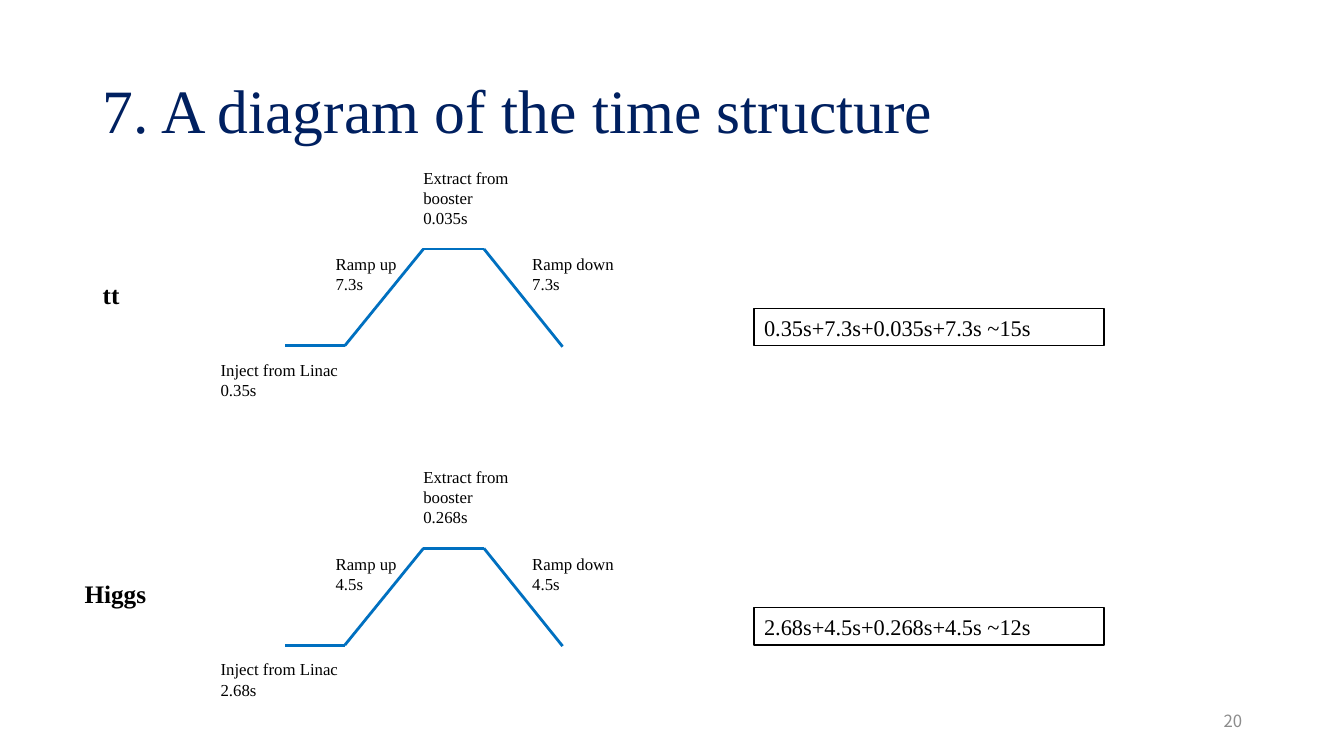
from itertools import pairwise

from lxml import etree
from pptx import Presentation
from pptx.dml.color import RGBColor
from pptx.enum.shapes import MSO_CONNECTOR, MSO_SHAPE
from pptx.enum.text import MSO_ANCHOR, PP_ALIGN
from pptx.oxml.ns import qn
from pptx.util import Inches, Pt

STRAIGHT = MSO_CONNECTOR.STRAIGHT
RECTANGLE = MSO_SHAPE.RECTANGLE
MIDDLE = MSO_ANCHOR.MIDDLE
LEFT, RIGHT = PP_ALIGN.LEFT, PP_ALIGN.RIGHT

SERIF = "Times New Roman"
BLACK, WHITE, NAVY, BLUE, GREY = "000000", "FFFFFF", "002060", "0070C0", "8C8C8C"


def color(value):
    return RGBColor.from_string(value)


def write(shape, lines, size, text_color=BLACK, font_name=SERIF, bold=False, align=LEFT):
    frame = shape.text_frame
    frame.word_wrap = True
    frame.text = "\n".join(lines)
    for paragraph in frame.paragraphs:
        paragraph.alignment = align
        paragraph.font.size = Pt(size)
        paragraph.font.name = font_name
        paragraph.font.bold = bold
        paragraph.font.color.rgb = color(text_color)


presentation = Presentation()
presentation.slide_width = Inches(13.33)
presentation.slide_height = Inches(7.5)
slide = presentation.slides.add_slide(presentation.slide_layouts[5])

# Title
title = slide.shapes.title
title.left, title.top = Inches(0.92), Inches(0.4)
title.width, title.height = Inches(11.5), Inches(1.45)
write(title, ["7. A diagram of the time structure"], 44, NAVY)
title.text_frame.vertical_anchor = MIDDLE
title.text_frame.paragraphs[0].line_spacing = 0.9

# One cycle per mode: name, left, width, top offset, stage times, total
modes = [
    ("tt", 0.92, 0.73, 0, ("0.35s", "7.3s", "0.035s", "7.3s"), "15s"),
    ("Higgs", 0.74, 0.91, 2.97, ("2.68s", "4.5s", "0.268s", "4.5s"), "12s"),
]
# Stage label, left, top, width, height
stages = [
    ("Inject from Linac", 2.09, 3.52, 1.46, 0.5),
    ("Ramp up", 3.23, 2.47, 0.91, 0.5),
    ("Extract from booster", 4.1, 1.61, 1.08, 0.71),
    ("Ramp down", 5.18, 2.47, 1.08, 0.5),
]
cycle_points = [(2.83, 3.43), (3.42, 3.43), (4.2, 2.47), (4.8, 2.47), (5.58, 3.44)]

for name, name_left, name_width, offset, times, total in modes:
    # Mode name
    mode_name = slide.shapes.add_textbox(
        Inches(name_left), Inches(2.72 + offset), Inches(name_width), Inches(0.4))
    write(mode_name, [name], 18, bold=True)

    # Total cycle time
    total_box = slide.shapes.add_shape(
        RECTANGLE, Inches(7.48), Inches(3.06 + offset), Inches(3.47), Inches(0.37))
    total_box.shadow.inherit = False
    total_box.fill.solid()
    total_box.fill.fore_color.rgb = color(WHITE)
    total_box.line.color.rgb = color(BLACK)
    total_box.line.width = Pt(1)
    write(total_box, ["+".join(times) + " ~" + total], 16)

    # Cycle outline
    cycle = slide.shapes.add_group_shape()
    for (x1, y1), (x2, y2) in pairwise(cycle_points):
        segment = cycle.shapes.add_connector(
            STRAIGHT, Inches(x1), Inches(y1 + offset), Inches(x2), Inches(y2 + offset))
        segment.line.color.rgb = color(BLUE)
        segment.line.width = Pt(2)
        etree.SubElement(segment.element.spPr, qn("a:effectLst"))

    # Stage labels
    for (stage, left, top, width, height), time in zip(stages, times):
        label = cycle.shapes.add_textbox(
            Inches(left), Inches(top + offset), Inches(width), Inches(height))
        write(label, [stage, time], 12)

# Slide number
slide_number = slide.shapes.add_textbox(Inches(9.42), Inches(6.95), Inches(3), Inches(0.4))
write(slide_number, ["20"], 12, GREY, "Noto Sans CJK SC", align=RIGHT)
slide_number.text_frame.vertical_anchor = MIDDLE

presentation.save("out.pptx")
